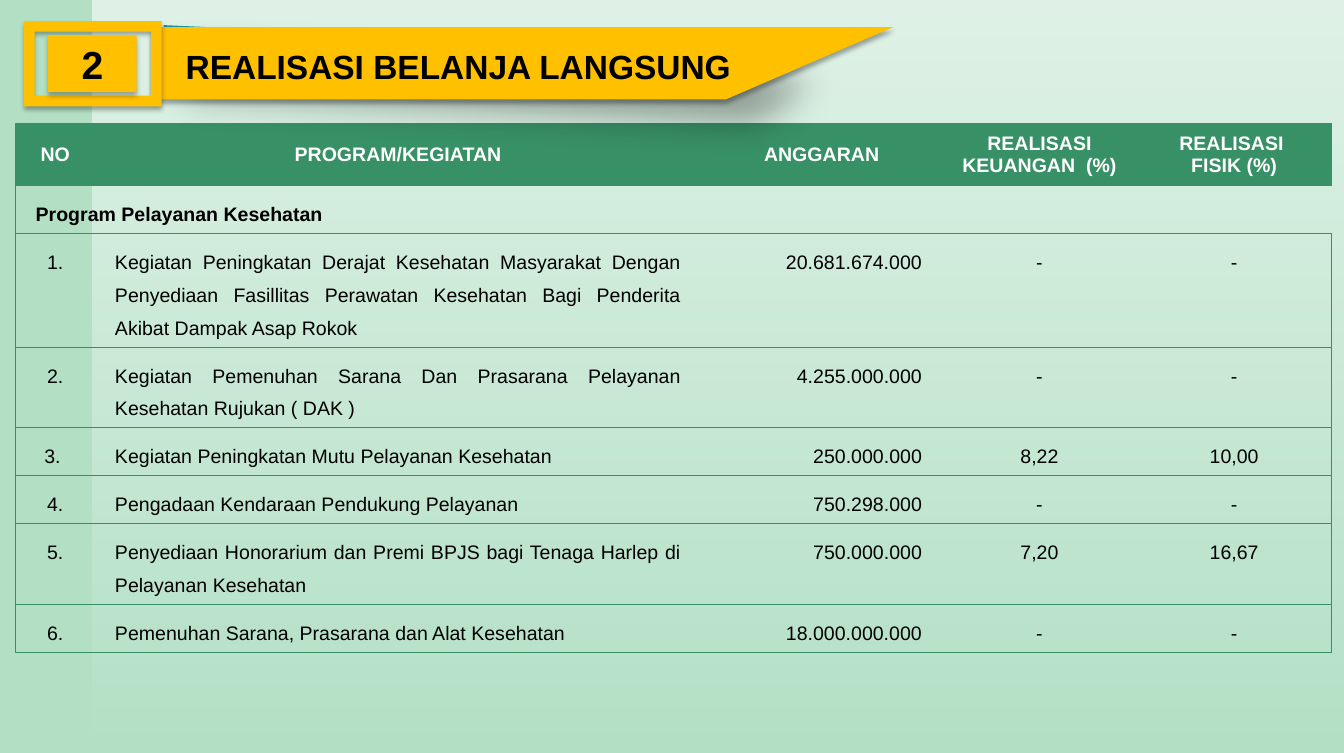
from dataclasses import dataclass

from lxml import etree
from pptx import Presentation
from pptx.dml.color import RGBColor
from pptx.enum.shapes import MSO_SHAPE
from pptx.enum.text import MSO_ANCHOR, PP_ALIGN
from pptx.oxml.ns import qn
from pptx.util import Pt

RECTANGLE, FRAME = MSO_SHAPE.RECTANGLE, MSO_SHAPE.FRAME
MIDDLE, TOP = MSO_ANCHOR.MIDDLE, MSO_ANCHOR.TOP
LEFT, CENTER, RIGHT, JUSTIFY = PP_ALIGN.LEFT, PP_ALIGN.CENTER, PP_ALIGN.RIGHT, PP_ALIGN.JUSTIFY

COLORS = {"mint": "B3E0C5", "green": "389066", "gold": "FFC000",
          "teal": "1B91A1", "white": "FFFFFF", "black": "000000"}
FONT = "Arial"
NO_TABLE_STYLE = "{2D5ABB26-0587-4C30-8999-92F81FD0307C}"


@dataclass
class Shadow:
    opacity: int
    blur: float
    distance: float
    angle: int


@dataclass
class Outline:
    color: str
    points: list[tuple[float, float]]
    shadow: Shadow


@dataclass
class Block:
    preset: int
    box: tuple[float, float, float, float]


@dataclass
class Activity:
    number: str
    name: str
    budget: str
    finance: str
    physical: str
    lines: int = 1


NEAR_SHADOW = Shadow(32, 3.5, 2.2, 90)
FAR_SHADOW = Shadow(35, 25, 25, 45)

RIBBONS = [
    Outline("teal", [(117.4, 18), (557.3, 38.2), (556.6, 47.5), (522.7, 69.8), (115.9, 51.1)],
            FAR_SHADOW),
    Outline("gold", [(109.4, 19.4), (640.8, 19.4), (520.6, 71.3), (109.4, 71.3)], NEAR_SHADOW),
]
NUMBER_FRAME = Block(FRAME, (17.3, 15.1, 98.6, 61.2))
NUMBER_PLATE = Block(RECTANGLE, (34.6, 25.2, 63.4, 41))

COLUMN_WIDTHS = [56.9, 434.9, 172.8, 139.7, 139.7]
COLUMN_ALIGNS = [CENTER, JUSTIFY, RIGHT, CENTER, CENTER]
HEADER = ["NO", "PROGRAM/KEGIATAN", "ANGGARAN", "REALISASI KEUANGAN  (%)", "REALISASI \nFISIK (%)"]
PROGRAM = "Program Pelayanan Kesehatan"
ACTIVITIES = [
    Activity("1.", "Kegiatan Peningkatan Derajat Kesehatan Masyarakat Dengan Penyediaan Fasillitas "
             "Perawatan Kesehatan Bagi Penderita Akibat Dampak Asap Rokok",
             "20.681.674.000", "-", "-", 3),
    Activity("2.", "Kegiatan Pemenuhan Sarana Dan Prasarana Pelayanan Kesehatan Rujukan ( DAK )",
             "4.255.000.000", "-", "-", 2),
    Activity("3. ", "Kegiatan Peningkatan Mutu Pelayanan Kesehatan", "250.000.000", "8,22", "10,00"),
    Activity("4.", "Pengadaan Kendaraan Pendukung Pelayanan", "750.298.000", "-", "-"),
    Activity("5.", "Penyediaan Honorarium dan Premi BPJS bagi Tenaga Harlep di Pelayanan Kesehatan",
             "750.000.000", "7,20", "16,67", 2),
    Activity("6.", "Pemenuhan Sarana, Prasarana dan Alat Kesehatan", "18.000.000.000", "-", "-"),
]
HEADER_HEIGHT, ROW_PADDING, LINE_HEIGHT = 44.2, 10.8, 23.6


def rgb(name: str) -> RGBColor:
    return RGBColor.from_string(COLORS[name])


def apply(target, values: dict) -> None:
    for name, value in values.items():
        setattr(target, name, value)


def write(frame, text: str, size: float, color: str, bold: bool, align, spacing: float = 1) -> None:
    frame.text = text
    for para in frame.paragraphs:
        apply(para, {"alignment": align, "line_spacing": spacing})
        for span in para.runs:
            apply(span.font, {"name": FONT, "size": Pt(size), "bold": bold})
            span.font.color.rgb = rgb(color)


def paint(shape, color: str, shadow: Shadow) -> None:
    shape.fill.solid()
    shape.fill.fore_color.rgb = rgb(color)
    shape.line.fill.background()
    shape.shadow.inherit = False
    effects = shape._element.spPr.find(qn("a:effectLst"))
    outer = etree.SubElement(effects, qn("a:outerShdw"), blurRad=str(Pt(shadow.blur)),
                             dist=str(Pt(shadow.distance)), dir=str(shadow.angle * 60000),
                             algn="tl", rotWithShape="0")
    tint = etree.SubElement(outer, qn("a:srgbClr"), val=COLORS["black"])
    etree.SubElement(tint, qn("a:alpha"), val=str(shadow.opacity * 1000))


def add_block(page, block: Block):
    return page.shapes.add_shape(block.preset, *map(Pt, block.box))


def add_outline(page, outline: Outline) -> None:
    points = [(Pt(x), Pt(y)) for x, y in outline.points]
    builder = page.shapes.build_freeform(*points[0])
    builder.add_line_segments(points[1:], close=True)
    paint(builder.convert_to_shape(), outline.color, outline.shadow)


def add_veil(page) -> None:
    veil = add_block(page, Block(RECTANGLE, (66.2, 0, 897.9, 540)))
    veil.shadow.inherit = False
    veil.line.fill.background()
    veil.fill.gradient()
    veil.fill.gradient_angle = 270
    for stop, position, opacity in zip(veil.fill.gradient_stops, (0, 1), (60, 0)):
        stop.position = position
        stop.color.rgb = rgb("white")
        for tint in stop._gs.iter(qn("a:srgbClr")):
            etree.SubElement(tint, qn("a:alpha"), val=str(opacity * 1000))


def set_borders(cell, sides: str) -> None:
    properties = cell._tc.get_or_add_tcPr()
    for index, side in enumerate(sides):
        line = etree.Element(qn(f"a:ln{side}"), w=str(Pt(0.5)))
        fill = etree.SubElement(line, qn("a:solidFill"))
        etree.SubElement(fill, qn("a:srgbClr"), val=COLORS["green"])
        properties.insert(index, line)


def fill_cell(cell, text: str, align, header: bool, bold: bool) -> None:
    apply(cell, {"margin_left": Pt(14.4), "margin_right": Pt(14.4),
                 "margin_top": Pt(5.4), "margin_bottom": Pt(5.4),
                 "vertical_anchor": MIDDLE if header else TOP})
    write(cell.text_frame, text, 14, "white" if header else "black", bold, align, 1 if header else 1.5)
    if header:
        cell.fill.solid()
        cell.fill.fore_color.rgb = rgb("green")
    else:
        cell.fill.background()


def add_budget_table(page) -> None:
    rows = [HEADER, [PROGRAM, "", "", "", ""]]
    rows += [[item.number, item.name, item.budget, item.finance, item.physical] for item in ACTIVITIES]
    heights = [HEADER_HEIGHT]
    heights += [ROW_PADDING + LINE_HEIGHT * lines for lines in [1] + [item.lines for item in ACTIVITIES]]
    last = len(COLUMN_WIDTHS) - 1
    table = page.shapes.add_table(len(rows), last + 1, Pt(11.2), Pt(88.6),
                                  Pt(sum(COLUMN_WIDTHS)), Pt(sum(heights))).table
    apply(table, {"first_row": False, "horz_banding": False})
    table._tbl.tblPr.find(qn("a:tableStyleId")).text = NO_TABLE_STYLE
    for column, width in zip(table.columns, COLUMN_WIDTHS):
        column.width = Pt(width)
    for row, (texts, height) in enumerate(zip(rows, heights)):
        table.rows[row].height = Pt(height)
        for column, text in enumerate(texts):
            cell = table.cell(row, column)
            align = {0: CENTER, 1: LEFT}.get(row, COLUMN_ALIGNS[column])
            fill_cell(cell, text, align, header=row == 0, bold=row < 2)
            set_borders(cell, "L" * (column == 0) + "R" * (column == last) + "TB")
    table.cell(1, 0).merge(table.cell(1, last))


def add_heading(page) -> None:
    for ribbon in RIBBONS:
        add_outline(page, ribbon)
    paint(add_block(page, NUMBER_FRAME), "gold", NEAR_SHADOW)
    plate = add_block(page, NUMBER_PLATE)
    paint(plate, "gold", NEAR_SHADOW)
    plate.text_frame.vertical_anchor = MIDDLE
    write(plate.text_frame, "2", 28, "black", True, CENTER)
    title = page.shapes.add_textbox(Pt(133.2), Pt(29.5), Pt(405.4), Pt(36)).text_frame
    apply(title, {"word_wrap": True, "vertical_anchor": MIDDLE, "margin_left": 0})
    write(title, "REALISASI BELANJA LANGSUNG", 24, "black", True, LEFT)


def main() -> None:
    deck = Presentation()
    apply(deck, {"slide_width": Pt(964.1), "slide_height": Pt(540)})
    page = deck.slides.add_slide(deck.slide_layouts[6])
    page.background.fill.solid()
    page.background.fill.fore_color.rgb = rgb("mint")
    add_veil(page)
    add_budget_table(page)
    add_heading(page)
    deck.save("out.pptx")


if __name__ == "__main__":
    main()
